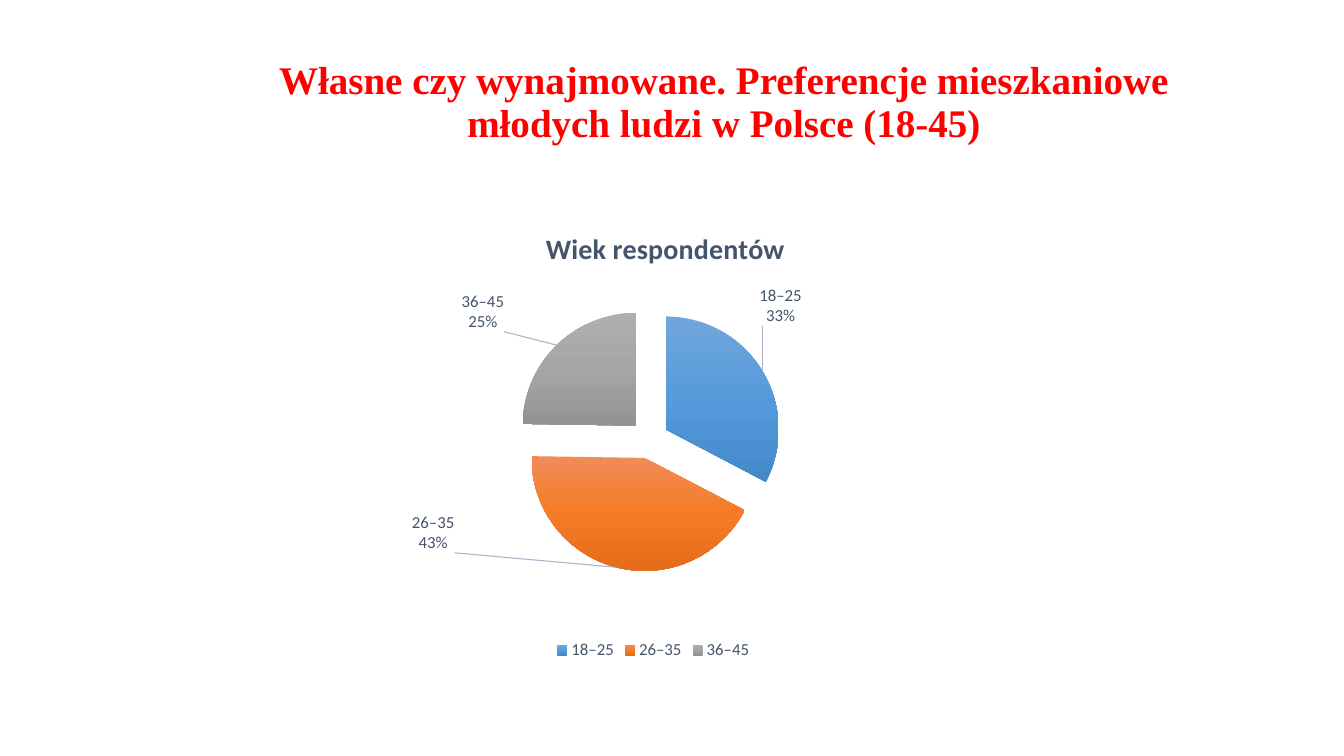
from copy import deepcopy
from dataclasses import dataclass

from lxml.etree import SubElement
from pptx import Presentation
from pptx.chart.data import CategoryChartData
from pptx.dml.color import RGBColor
from pptx.enum.chart import XL_CHART_TYPE, XL_LABEL_POSITION, XL_LEGEND_POSITION
from pptx.enum.text import MSO_ANCHOR, PP_ALIGN
from pptx.oxml import parse_xml
from pptx.oxml.ns import nsdecls, qn
from pptx.util import Inches, Pt


@dataclass(frozen=True)
class Theme:
    heading_font: str = "Times New Roman"
    chart_font: str = "Calibri"
    heading: str = "FF0000"
    chart_text: str = "44546A"
    leader: str = "A9B1CB"
    heading_size: float = 27.9
    chart_title_size: int = 20
    label_size: int = 12


THEME = Theme()
AGE_GROUPS = [
    ("18–25", 33, ("71A6DB", "559BDB", "448ACA"), (-0.01, -0.09)),
    ("26–35", 43, ("F18C57", "F67B28", "E56C19"), (-0.2, -0.13)),
    ("36–45", 25, ("AFAFAF", "A5A5A5", "939393"), (-0.06, -0.02)),
]


def style_font(font, name, size, color, bold=False):
    font.name = name
    font.size = Pt(size)
    font.bold = bold
    font.color.rgb = RGBColor.from_string(color)


def style_chart_font(font, size=THEME.label_size, bold=False):
    style_font(font, THEME.chart_font, size, THEME.chart_text, bold)


def set_layout(parent, index, **values):
    for layout in parent.findall(qn("c:layout")):
        parent.remove(layout)
    entries = "".join(f'<c:{key} val="{value}"/>' for key, value in values.items())
    parent.insert(index, parse_xml(
        f'<c:layout {nsdecls("c")}><c:manualLayout>{entries}'
        "</c:manualLayout></c:layout>"))


def show_category_and_percent(labels):
    for flag, shown in (("showVal", "0"), ("showCatName", "1"), ("showPercent", "1")):
        labels.find(qn(f"c:{flag}")).set("val", shown)
    separator = parse_xml(f'<c:separator {nsdecls("c")}>\n</c:separator>')
    labels.find(qn("c:showBubbleSize")).addnext(separator)


def fill_gradient(point, point_xml, colors):
    fill = point.format.fill
    fill.gradient()
    fill.gradient_angle = 270
    stop_list = point_xml().find(f".//{qn('a:gsLst')}")
    stop_list.append(deepcopy(stop_list[-1]))
    for stop, color, position in zip(fill.gradient_stops, colors, (0, 0.5, 1)):
        stop.color.rgb = RGBColor.from_string(color)
        stop.position = position


def style_slices(chart):
    series = chart.plots[0].series[0]
    series_xml = chart.element.find(f".//{qn('c:ser')}")
    explosion = parse_xml(f'<c:explosion {nsdecls("c")} val="17"/>')
    series_xml.find(qn("c:tx")).addnext(explosion)

    style_chart_font(series.data_labels.font)
    labels_xml = series_xml.find(qn("c:dLbls"))
    show_category_and_percent(labels_xml)
    leader_lines = parse_xml(
        f'<c:leaderLines {nsdecls("c", "a")}><c:spPr><a:ln w="9525"><a:solidFill>'
        f'<a:srgbClr val="{THEME.leader}"/></a:solidFill></a:ln></c:spPr></c:leaderLines>')
    show_leaders = labels_xml.find(qn("c:showLeaderLines"))
    if show_leaders is None:
        show_leaders = SubElement(labels_xml, qn("c:showLeaderLines"))
    show_leaders.set("val", "1")
    show_leaders.addnext(leader_lines)

    for index, (_, _, colors, (dx, dy)) in enumerate(AGE_GROUPS):
        point = series.points[index]
        fill_gradient(point, lambda: series_xml.findall(qn("c:dPt"))[index], colors)
        style_chart_font(point.data_label.font)
        point.data_label.position = XL_LABEL_POSITION.OUTSIDE_END
        label_xml = labels_xml.findall(qn("c:dLbl"))[index]
        show_category_and_percent(label_xml)
        set_layout(label_xml, 1, x=dx, y=dy)


def add_age_chart(slide):
    data = CategoryChartData()
    data.categories = [group[0] for group in AGE_GROUPS]
    data.add_series("Wiek respondentów", [group[1] for group in AGE_GROUPS])
    chart = slide.shapes.add_chart(
        XL_CHART_TYPE.PIE, Inches(2.49), Inches(1.99), Inches(7.98), Inches(4.6), data
    ).chart
    style_chart_font(chart.font)
    chart.plots[0].vary_by_categories = True

    chart.has_title = True
    title = chart.chart_title.text_frame
    title.text = "Wiek respondentów"
    style_chart_font(title.paragraphs[0].runs[0].font, THEME.chart_title_size, True)
    set_layout(chart.element.find(f".//{qn('c:title')}"), 1,
               xMode="edge", yMode="edge", x=0.36, y=0.05)

    chart.has_legend = True
    chart.legend.position = XL_LEGEND_POSITION.BOTTOM
    chart.legend.include_in_layout = False
    style_chart_font(chart.legend.font)

    set_layout(chart.element.find(f".//{qn('c:plotArea')}"), 0, layoutTarget="inner",
               xMode="edge", yMode="edge", x=0.33, y=0.23, w=0.33, h=0.57)
    style_slices(chart)


def add_heading(slide, text):
    heading = slide.shapes.add_textbox(
        Inches(1.43), Inches(0.3), Inches(11.5), Inches(1.45)).text_frame
    heading.word_wrap = True
    heading.vertical_anchor = MSO_ANCHOR.MIDDLE
    paragraph = heading.paragraphs[0]
    paragraph.text = text
    paragraph.alignment = PP_ALIGN.CENTER
    paragraph.line_spacing = 0.9
    for run in paragraph.runs:
        style_font(run.font, THEME.heading_font, THEME.heading_size, THEME.heading, True)


def main():
    presentation = Presentation()
    presentation.slide_width = Inches(13.33)
    presentation.slide_height = Inches(7.5)
    slide = presentation.slides.add_slide(presentation.slide_layouts[6])
    add_heading(slide, "Własne czy wynajmowane. Preferencje mieszkaniowe\n"
                       "młodych ludzi w Polsce (18-45)")
    add_age_chart(slide)
    presentation.save("out.pptx")


if __name__ == "__main__":
    main()
